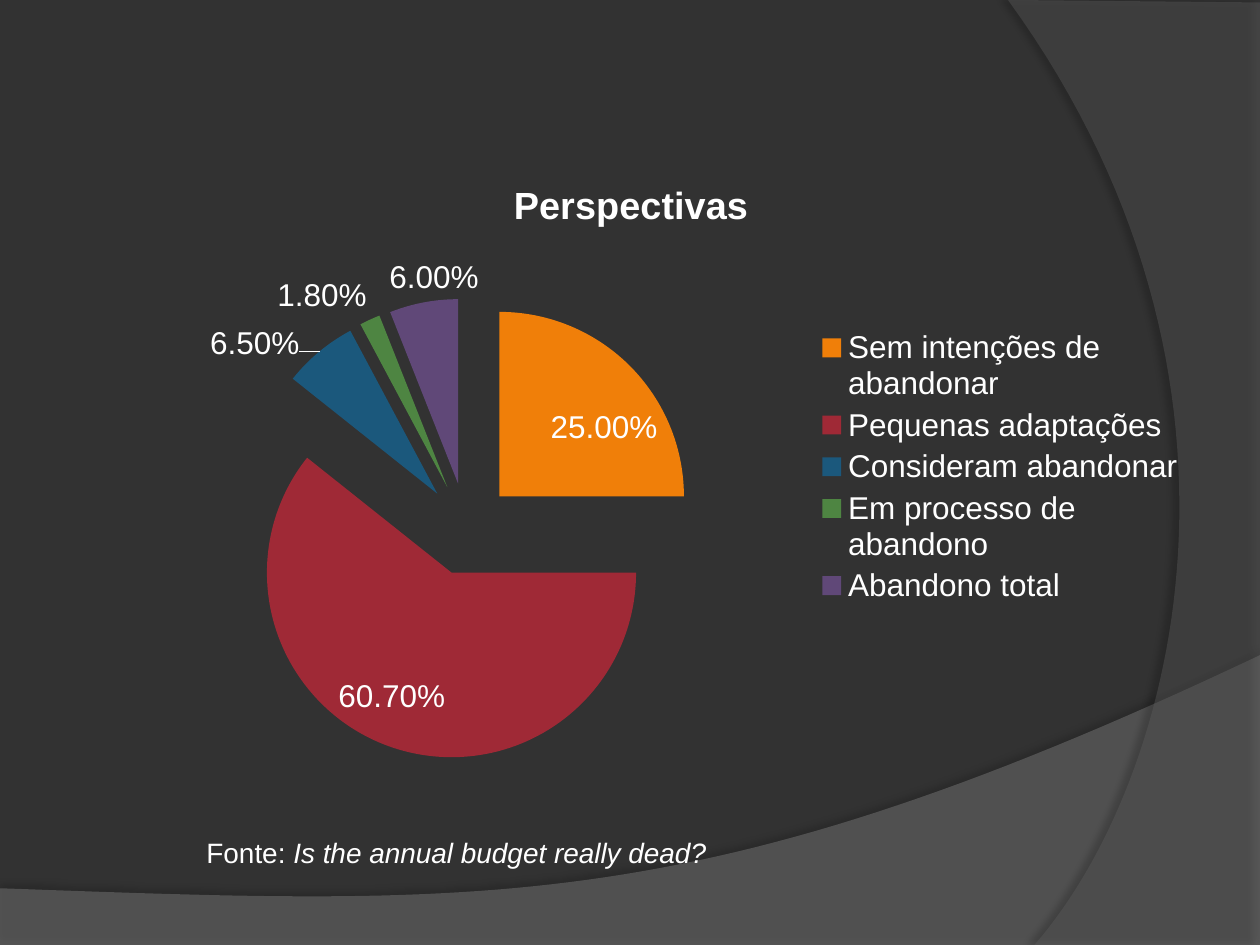
from lxml import etree
from pptx import Presentation
from pptx.chart.data import CategoryChartData
from pptx.dml.color import RGBColor
from pptx.enum.chart import XL_CHART_TYPE, XL_LABEL_POSITION, XL_LEGEND_POSITION
from pptx.oxml import parse_xml
from pptx.oxml.ns import nsdecls, qn
from pptx.util import Inches, Pt

PIE = XL_CHART_TYPE.PIE
BEST_FIT = XL_LABEL_POSITION.BEST_FIT
LEGEND_RIGHT = XL_LEGEND_POSITION.RIGHT

W, H = 10, 7.5
FONT = "Arial"
BACKGROUND = RGBColor(0x32, 0x32, 0x32)
WHITE = RGBColor(0xFF, 0xFF, 0xFF)
LOWER_GREY = RGBColor(0x7F, 0x7F, 0x7F)
RIGHT_GREY = RGBColor(0x5E, 0x5E, 0x5E)

# Category, share, slice colour
OUTLOOK = [
    ("Sem intenções de abandonar", 0.25, RGBColor(0xF0, 0x7F, 0x09)),
    ("Pequenas adaptações", 0.607, RGBColor(0x9F, 0x29, 0x36)),
    ("Consideram abandonar", 0.065, RGBColor(0x1B, 0x58, 0x7C)),
    ("Em processo de abandono", 0.018, RGBColor(0x4E, 0x85, 0x42)),
    ("Abandono total", 0.06, RGBColor(0x60, 0x48, 0x78)),
]


def style_font(font, size, bold=False):
    font.name, font.size, font.bold = FONT, Pt(size), bold
    font.color.rgb = WHITE


def bezier(p0, p1, p2, p3, steps=60):
    """Points along a cubic curve, without its start."""
    points = []
    for i in range(1, steps + 1):
        t = i / steps
        u = 1 - t
        points.append(tuple(
            u**3 * a + 3 * u * u * t * b + 3 * u * t * t * c + t**3 * d
            for a, b, c, d in zip(p0, p1, p2, p3)))
    return points


def add_wave(s, points, color, opacity, shadow):
    """Translucent outline with a soft shadow (opacity, blur, distance, angle)."""
    emu = [(Inches(x), Inches(y)) for x, y in points]
    builder = s.shapes.build_freeform(*emu[0])
    builder.add_line_segments(emu[1:], close=True)
    sp = builder.convert_to_shape()
    sp.fill.solid()
    sp.fill.fore_color.rgb = color
    sp.line.fill.background()
    sp_pr = sp.fill._xPr
    rgb = sp_pr.find(qn("a:solidFill")).find(qn("a:srgbClr"))
    etree.SubElement(rgb, qn("a:alpha"), val=str(opacity * 1000))
    shade, blur, distance, angle = shadow
    sp_pr.append(parse_xml(
        f'<a:effectLst {nsdecls("a")}><a:outerShdw blurRad="{Pt(blur)}" '
        f'dist="{Pt(distance)}" dir="{angle * 60000}" algn="ctr" rotWithShape="0">'
        f'<a:srgbClr val="000000"><a:alpha val="{shade * 1000}"/></a:srgbClr>'
        '</a:outerShdw></a:effectLst>'))


def set_plot_area(chart, x, y, w, h):
    """Fix the inner plot area, in shares of the chart's size."""
    area = chart._chartSpace.chart.plotArea
    for old in area.findall(qn("c:layout")):
        area.remove(old)
    area.insert(0, parse_xml(
        f'<c:layout {nsdecls("c")}><c:manualLayout><c:layoutTarget val="inner"/>'
        '<c:xMode val="edge"/><c:yMode val="edge"/>'
        f'<c:x val="{x}"/><c:y val="{y}"/><c:w val="{w}"/><c:h val="{h}"/>'
        '</c:manualLayout></c:layout>'))


def add_pie(s, title, rows, explosion):
    data = CategoryChartData(number_format="0.00%")
    data.categories = [name for name, _, _ in rows]
    data.add_series(title, [share for _, share, _ in rows])
    chart = s.shapes.add_chart(PIE, Inches(0.51), Inches(1.23),
                               Inches(9), Inches(4.95), data).chart
    style_font(chart.font, 18)

    # Title and legend
    chart.has_title = True
    tf = chart.chart_title.text_frame
    tf.text = title
    style_font(tf.paragraphs[0].runs[0].font, 21.6, bold=True)
    chart.has_legend = True
    chart.legend.position = LEGEND_RIGHT
    chart.legend.include_in_layout = False
    style_font(chart.legend.font, 18)

    # Slices
    plot = chart.plots[0]
    plot.vary_by_categories = True
    series = plot.series[0]
    for i, (_, _, color) in enumerate(rows):
        fill = series.points[i].format.fill
        fill.solid()
        fill.fore_color.rgb = color
    series._element.find(qn("c:dPt")).addprevious(
        parse_xml(f'<c:explosion {nsdecls("c")} val="{explosion}"/>'))

    # Value labels
    plot.has_data_labels = True
    labels = plot.data_labels
    labels.show_value, labels.show_percentage = True, False
    labels.number_format, labels.number_format_is_linked = "0.00%", False
    labels.position = BEST_FIT
    style_font(labels.font, 18)
    set_plot_area(chart, 0.15, 0.23, 0.41, 0.74)


def add_source(s, label, work):
    tf = s.shapes.add_textbox(Inches(1.54), Inches(6.58),
                              Inches(4.33), Inches(0.66)).text_frame
    tf.word_wrap = True
    p = tf.paragraphs[0]
    p.space_after = Pt(10)
    for text, italic in ((label, False), (work, True)):
        r = p.add_run()
        r.text = text
        style_font(r.font, 16)
        r.font.italic = italic


def main():
    prs = Presentation()
    prs.slide_width, prs.slide_height = Inches(W), Inches(H)
    s = prs.slides.add_slide(prs.slide_layouts[6])
    s.background.fill.solid()
    s.background.fill.fore_color.rgb = BACKGROUND

    # Background waves
    lower = [(0, 7.05), (0, H), (W, H), (W, 5.2)]
    lower += bezier((W, 5.2), (5.59, 7.29), (3.91, 7.19), (0, 7.05))
    add_wave(s, lower, LOWER_GREY, 45, (35, 4, 3.5, 270))
    right = [(W, 0.02), (W, H), (8.21, H)]
    right += bezier((8.21, H), (9.35, 6.19), (10.18, 3), (8, 0))
    add_wave(s, right, RIGHT_GREY, 40, (45, 4, 4, 180))

    add_pie(s, "Perspectivas", OUTLOOK, explosion=25)
    add_source(s, "Fonte: ", "Is the annual budget really dead?")
    prs.save("out.pptx")


if __name__ == "__main__":
    main()
